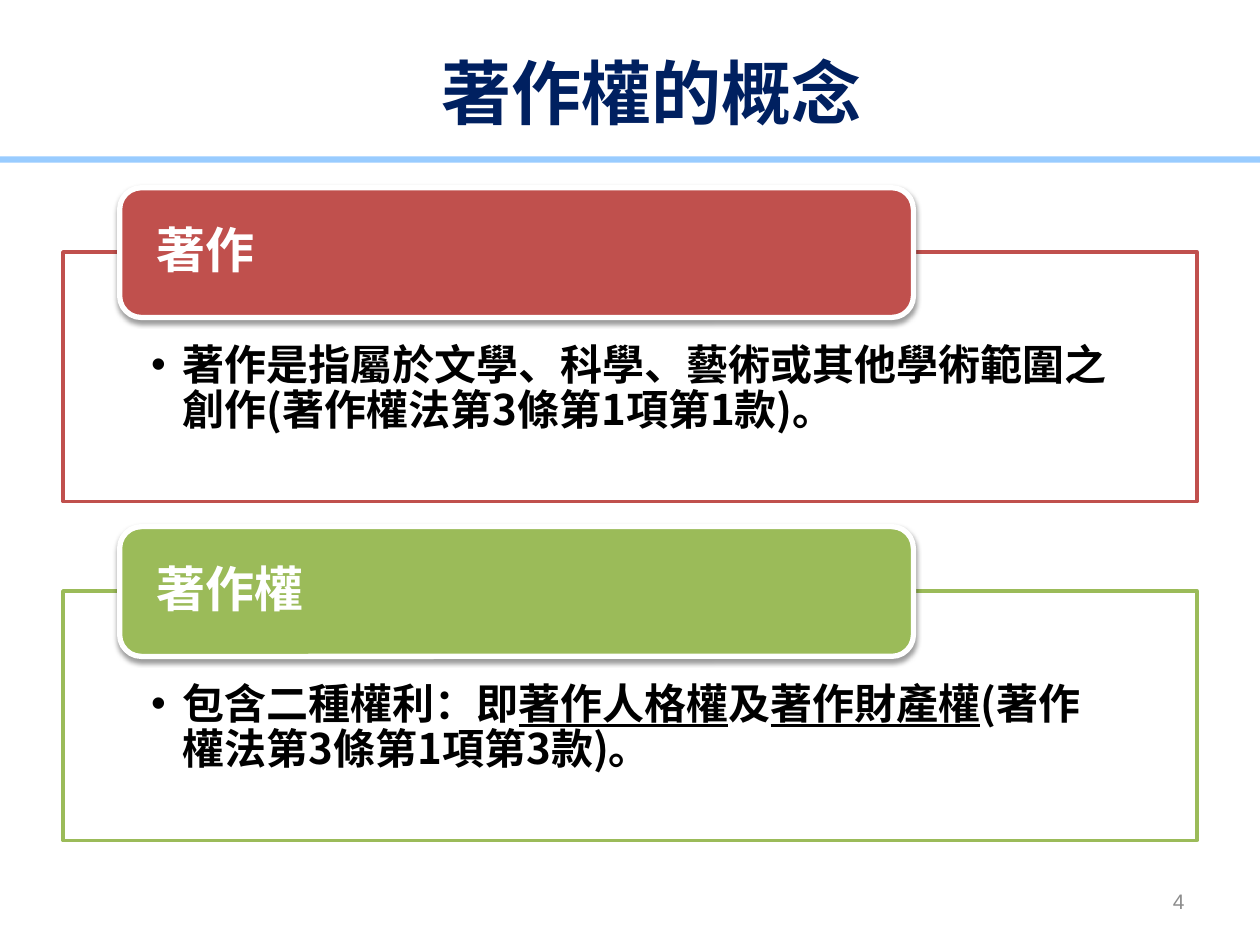
"""Build the slide on the concept of copyright."""
import lxml.etree
import pptx
import pptx.dml.color
import pptx.enum.shapes
import pptx.enum.text
import pptx.oxml
import pptx.oxml.ns
import pptx.util

RGBColor = pptx.dml.color.RGBColor
NAVY = RGBColor(0x00, 0x20, 0x60)
SKY = RGBColor(0x99, 0xCC, 0xFF)
RED = RGBColor(0xC0, 0x50, 0x4D)
GREEN = RGBColor(0x9B, 0xBB, 0x59)
WHITE = RGBColor(0xFF, 0xFF, 0xFF)
BLACK = RGBColor(0x00, 0x00, 0x00)
GRAY = RGBColor(0x8C, 0x8C, 0x8C)
HAN = "Noto Sans CJK SC"
SHAPE = pptx.enum.shapes.MSO_SHAPE
ALIGN = pptx.enum.text.PP_ALIGN
ANCHOR = pptx.enum.text.MSO_ANCHOR
qn = pptx.oxml.ns.qn
Inches = pptx.util.Inches
Pt = pptx.util.Pt

deck = pptx.Presentation()
deck.slide_width, deck.slide_height = Inches(10), Inches(7.5)
slide = deck.slides.add_slide(deck.slide_layouts[6])
column, row = deck.slide_width / 100, deck.slide_height / 75


def place(kind, left, top, width, height, fill=None, line=None, weight=0):
    box = (int(left * column), int(top * row), int(width * column), int(height * row))
    if kind is None:
        return slide.shapes.add_textbox(*box)
    part = slide.shapes.add_shape(kind, *box)
    part.shadow.inherit = False
    part.fill.solid()
    part.fill.fore_color.rgb = fill
    if line is None:
        part.line.fill.background()
    else:
        part.line.color.rgb = line
        part.line.width = Pt(weight)
    return part


def write(part, runs, size, color, align, anchor, margins=(0.1, 0.05), font=HAN, bold=True):
    frame = part.text_frame
    frame.word_wrap = True
    frame.vertical_anchor = anchor
    frame.margin_left = frame.margin_right = Inches(margins[0])
    frame.margin_top, frame.margin_bottom = Inches(margins[1]), Inches(margins[-1])
    paragraph = frame.paragraphs[0]
    paragraph.alignment = align
    for words, underlined in runs:
        run = paragraph.add_run()
        run.text = words
        run.font.size = Pt(size)
        run.font.bold = bold
        run.font.color.rgb = color
        run.font.name = font
        if underlined:
            run.font.underline = True
        lxml.etree.SubElement(run.font._element, qn("a:ea"), typeface=font)
    return paragraph


place(SHAPE.RECTANGLE, -0.4, 12.4, 100.6, 0.5, SKY)
title = place(None, 6.7, 2.1, 90, 10.4)
write(title, [("著作權的概念", False)], 40, NAVY, ALIGN.CENTER, ANCHOR.MIDDLE)

concepts = [
    ("著作", RED, [("著作是指屬於文學、科學、藝術或其他學術範圍之創作(著作權法第3條第1項第1款)。", False)]),
    ("著作權", GREEN, [("包含二種權利：即", False), ("著作人格權", True), ("及", False),
                    ("著作財產權", True), ("(著作權法第3條第1項第3款)。", False)]),
]
for index, (term, accent, definition) in enumerate(concepts):
    top = 20 + 26.9 * index
    panel = place(SHAPE.RECTANGLE, 5, top, 90, 19.8, WHITE, accent, 2)
    panel_color = panel.fill._xPr.find(qn("a:solidFill"))[0]
    lxml.etree.SubElement(panel_color, qn("a:alpha"), val="90000")
    meaning = write(panel, definition, 24, BLACK, ALIGN.LEFT, ANCHOR.TOP, (0.7, 0.73, 0.19))
    meaning.line_spacing = 0.9
    indents = meaning._p.get_or_add_pPr()
    indents.set("marL", str(Inches(0.25)))
    indents.set("indent", str(-Inches(0.25)))
    lxml.etree.SubElement(indents, qn("a:buFont"), typeface="Arial")
    lxml.etree.SubElement(indents, qn("a:buChar"), char="•")

    heading = place(SHAPE.ROUNDED_RECTANGLE, 9.5, top - 5.1, 63, 10.3, accent, WHITE, 3)
    shade = lxml.etree.SubElement(
        heading._element.spPr.find(qn("a:effectLst")), qn("a:outerShdw"),
        blurRad=str(Pt(3.1)), dist=str(Pt(1.6)), dir="5400000", rotWithShape="0")
    shade_color = lxml.etree.SubElement(shade, qn("a:srgbClr"), val=str(BLACK))
    lxml.etree.SubElement(shade_color, qn("a:alpha"), val="38000")
    label = write(heading, [(term, False)], 28, WHITE, ALIGN.LEFT, ANCHOR.MIDDLE, (0.24, 0))
    label.line_spacing = 0.9

page_number = place(None, 71.7, 69.5, 23.3, 4)
write(page_number, [("4", False)], 12, GRAY, ALIGN.RIGHT, ANCHOR.MIDDLE, font="Arial", bold=False)

deck.save("out.pptx")
